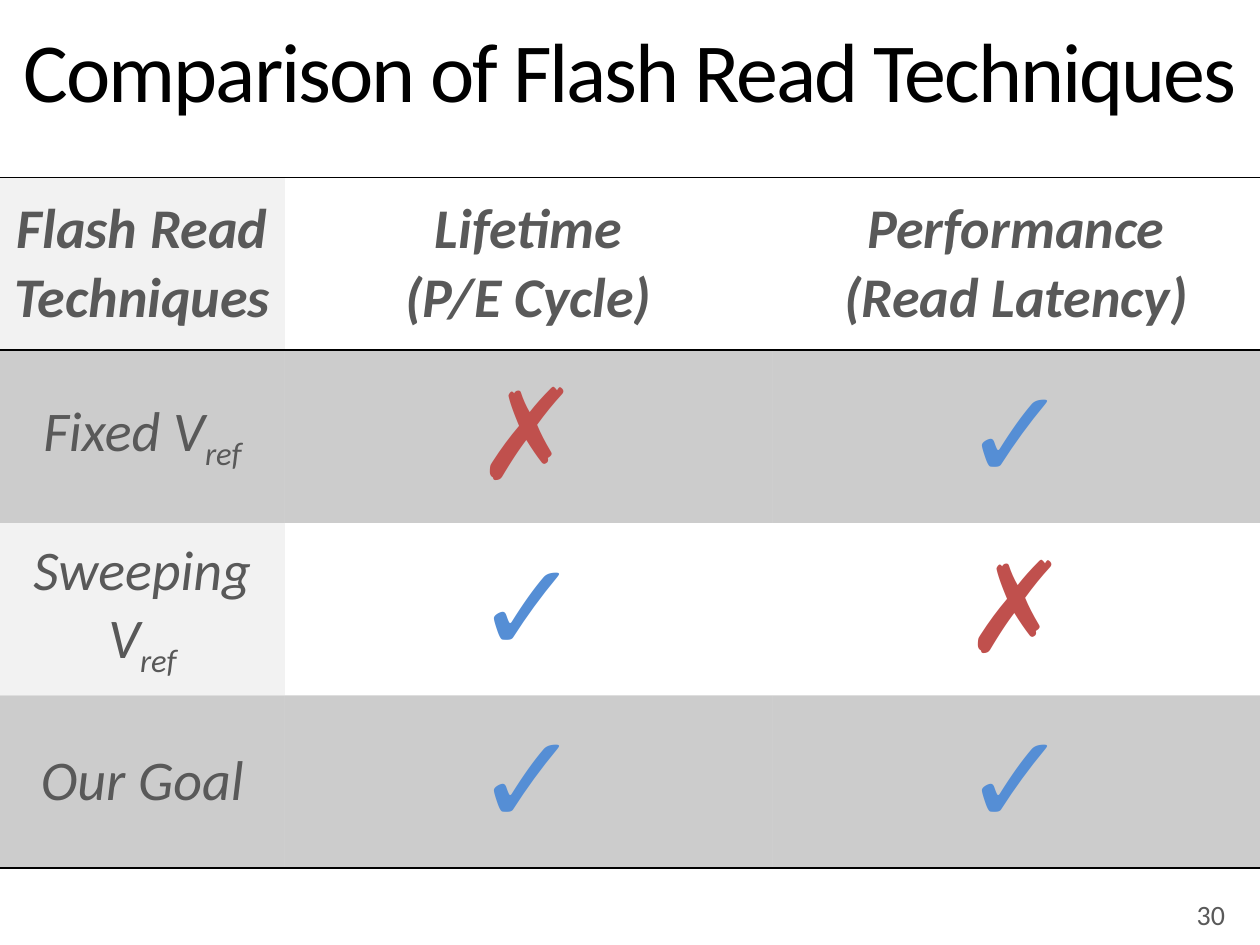
from dataclasses import dataclass

from lxml.etree import SubElement
from pptx import Presentation
from pptx.dml.color import RGBColor
from pptx.enum.text import MSO_ANCHOR, PP_ALIGN
from pptx.oxml.ns import qn
from pptx.util import Inches, Pt

WIDE, HIGH = 10, 7.5
TOP, ROW = 1.41, 1.37
COLS = (2.26, 3.87, 3.87)
FONT = "Calibri"
BLACK = RGBColor(0, 0, 0)
GREY = RGBColor(0x59, 0x59, 0x59)
PALE = RGBColor(0xF2, 0xF2, 0xF2)
RED = RGBColor(0xC0, 0x50, 0x4D)
BLUE = RGBColor(0x55, 0x8E, 0xD5)
PLAIN = "{2D5ABB26-0587-4C30-8999-92F81FD0307C}"


@dataclass
class Entry:
    text: str = ""
    sub: str = ""
    size: int = 32
    color: RGBColor = GREY
    bold: bool = False
    slant: bool = True


@dataclass
class Row:
    cells: tuple[Entry, ...]
    shade: bool = False
    lead: bool = False
    lines: tuple[str, ...] = ()


def mark(good: bool, bold: bool = False) -> Entry:
    return Entry("✓" if good else "✗", "", 72, BLUE if good else RED, bold, False)


def head(text: str) -> Entry:
    return Entry(text, bold=True)


GRID = [
    Row((head("Flash Read Techniques"), head("Lifetime\n(P/E Cycle)"),
         head("Performance\n(Read Latency)")), lead=True, lines=("T", "B")),
    Row((Entry("Fixed V", "ref"), mark(False), mark(True)), shade=True),
    Row((Entry("Sweeping V", "ref"), mark(True), mark(False)), lead=True),
    Row((Entry(),) * 3, shade=True, lines=("B",)),
]
GOAL = [Row((Entry("Our Goal"), mark(True, True), mark(True, True)))]


def style(run, size: int, color: RGBColor, bold=False, slant=False) -> None:
    font = run.font
    font.name, font.size = FONT, Pt(size)
    font.bold, font.italic = bold, slant
    font.color.rgb = color


def write(cell, entry: Entry) -> None:
    cell.vertical_anchor = MSO_ANCHOR.MIDDLE
    if not entry.text:
        return
    para = cell.text_frame.paragraphs[0]
    para.text = entry.text
    para.alignment = PP_ALIGN.CENTER
    if entry.sub:
        para.add_run().text = entry.sub
    for run in para.runs:
        style(run, entry.size, entry.color, entry.bold, entry.slant)
    if entry.sub:
        para.runs[-1].font._element.set("baseline", "-25000")


def rule(cell, side: str) -> None:
    """Draw a thin black border on one side of the cell."""
    line = SubElement(cell._tc.get_or_add_tcPr(), qn(f"a:ln{side}"), w=str(Pt(1)))
    fill = SubElement(line, qn("a:solidFill"))
    SubElement(fill, qn("a:srgbClr"), val=str(BLACK))


def paint(cell, row: Row, first: bool) -> None:
    if row.shade:
        cell.fill.solid()
        cell.fill.fore_color.rgb = BLACK
        tone = cell._tc.tcPr.find(qn("a:solidFill")).find(qn("a:srgbClr"))
        SubElement(tone, qn("a:alpha"), val="20000")
    elif row.lead and first:
        cell.fill.solid()
        cell.fill.fore_color.rgb = PALE
    else:
        cell.fill.background()


def draw(slide, rows: list[Row], top: float) -> None:
    table = slide.shapes.add_table(
        len(rows), len(COLS), 0, Inches(top), Inches(WIDE), Inches(ROW * len(rows))).table
    table.first_row = table.horz_banding = False
    table._tbl.tblPr.find(qn("a:tableStyleId")).text = PLAIN
    for col, width in zip(table.columns, COLS):
        col.width = Inches(width)
    for r, row in enumerate(rows):
        table.rows[r].height = Inches(ROW)
        for c, entry in enumerate(row.cells):
            cell = table.cell(r, c)
            write(cell, entry)
            for side in row.lines:
                rule(cell, side)
            paint(cell, row, c == 0)


def main() -> None:
    deck = Presentation()
    deck.slide_width, deck.slide_height = Inches(WIDE), Inches(HIGH)
    slide = deck.slides.add_slide(deck.slide_layouts[5])

    title = slide.shapes.title
    title.left, title.top = 0, 0
    title.width, title.height = Inches(WIDE), Inches(1.19)
    title.text_frame.vertical_anchor = MSO_ANCHOR.MIDDLE
    para = title.text_frame.paragraphs[0]
    para.text = "Comparison of Flash Read Techniques"
    para.alignment, para.line_spacing = PP_ALIGN.CENTER, 0.9
    style(para.runs[0], 48, BLACK)
    para.runs[0].font._element.set("spc", "-120")

    page = slide.shapes.add_textbox(Inches(7.57), Inches(7.06), Inches(2.25), Inches(0.4))
    page.text_frame.word_wrap = True
    page.text_frame.vertical_anchor = MSO_ANCHOR.MIDDLE
    para = page.text_frame.paragraphs[0]
    para.text = "30"
    para.alignment = PP_ALIGN.RIGHT
    style(para.runs[0], 16, GREY)

    draw(slide, GRID, TOP)
    draw(slide, GOAL, TOP + 3 * ROW)
    deck.save("out.pptx")


if __name__ == "__main__":
    main()
